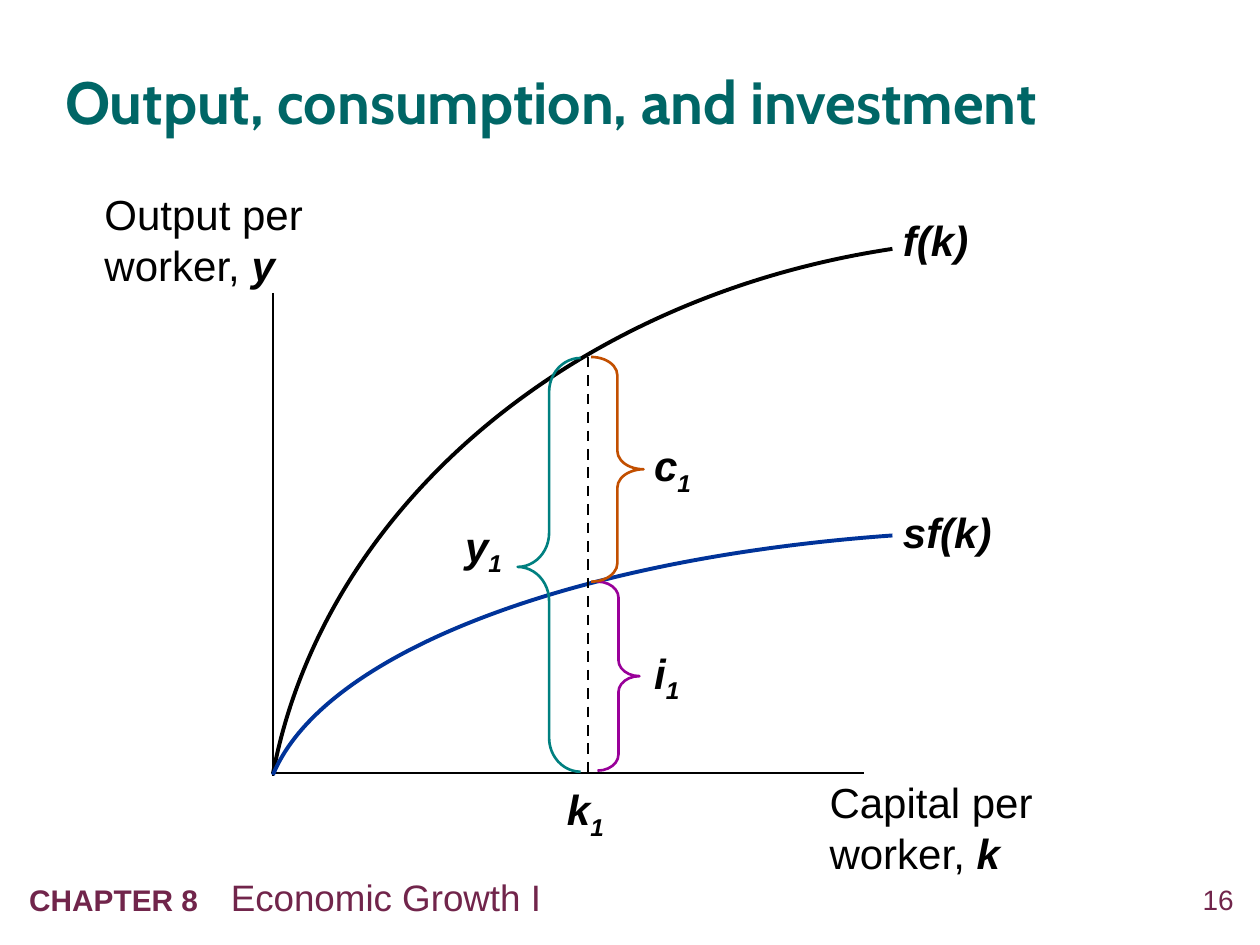
from dataclasses import dataclass

from lxml import etree
from pptx import Presentation
from pptx.dml.color import RGBColor
from pptx.enum import dml, shapes, text
from pptx.oxml.ns import qn
from pptx.util import Inches, Pt

BLACK = RGBColor(0x00, 0x00, 0x00)
BLUE = RGBColor(0x00, 0x33, 0x99)
TEAL = RGBColor(0x00, 0x80, 0x80)
PURPLE = RGBColor(0x99, 0x00, 0x99)
ORANGE = RGBColor(0xC2, 0x4F, 0x00)
TITLE_GREEN = RGBColor(0x00, 0x66, 0x66)
PLUM = RGBColor(0x71, 0x25, 0x4B)

# Grid of 120 columns by 90 rows; both steps are equal on a 4:3 slide
WIDTH, HEIGHT = Inches(10), Inches(7.5)
COLUMNS = 120
STEP = WIDTH / COLUMNS

Point = tuple[float, float]
Box = tuple[float, float, float, float]


@dataclass(frozen=True)
class Part:
    """A stretch of text; a part may start on a new line."""
    words: str
    size: float = 24
    bold: bool = False
    italic: bool = False
    subscript: bool = False
    new_line: bool = False


@dataclass(frozen=True)
class Curve:
    """A cubic curve: start, two control points and end."""
    points: tuple[Point, Point, Point, Point]
    color: RGBColor
    name: str
    label_box: Box


@dataclass(frozen=True)
class Brace:
    kind: shapes.MSO_SHAPE
    box: Box
    adjustments: Point
    color: RGBColor
    letter: str
    label_box: Box


CURVES = (
    Curve(((85, 23.7), (54.4, 28.3), (30.8, 48.4), (26, 73.7)),
          BLACK, "f(k)", (86, 20.4, 10, 4.8)),
    Curve(((85, 51), (54.4, 53.2), (30.8, 62.2), (26, 73.8)),
          BLUE, "sf(k)", (86, 48.2, 13, 4.8)),
)
BRACES = (
    Brace(shapes.MSO_SHAPE.LEFT_BRACE, (49.3, 34.1, 6, 39.4), (0.54, 0.505),
          TEAL, "y", (44.3, 49.9, 7, 4.8)),
    Brace(shapes.MSO_SHAPE.RIGHT_BRACE, (56.9, 55.4, 4, 18), (0.38, 0.5),
          PURPLE, "i", (62.3, 62, 7, 4.8)),
    Brace(shapes.MSO_SHAPE.RIGHT_BRACE, (56.3, 34, 5, 21.4), (0.35, 0.5),
          ORANGE, "c", (62.3, 42.2, 7, 4.8)),
)


def grid(*steps: float) -> list[int]:
    return [round(step * STEP) for step in steps]


def write(frame, parts: list[Part], *, color=BLACK, font="Arial",
          align=text.PP_ALIGN.LEFT, anchor=text.MSO_ANCHOR.MIDDLE,
          margins=(0, 0, 0, 0)):
    """Fill a text frame with one paragraph and return that paragraph."""
    frame.word_wrap = True
    frame.auto_size = text.MSO_AUTO_SIZE.NONE
    frame.vertical_anchor = anchor
    (frame.margin_left, frame.margin_top,
     frame.margin_right, frame.margin_bottom) = map(Inches, margins)
    paragraph = frame.paragraphs[0]
    paragraph.alignment = align
    for part in parts:
        if part.new_line:
            paragraph.add_line_break()
        run = paragraph.add_run()
        run.text = part.words
        run.font.name, run.font.size = font, Pt(part.size)
        run.font.bold, run.font.italic = part.bold, part.italic
        run.font.color.rgb = color
        if part.subscript:
            run.font._element.set("baseline", "-25000")
    return paragraph


def add_label(slide, box: Box, parts: list[Part], **formatting):
    label = slide.shapes.add_textbox(*grid(*box))
    return write(label.text_frame, parts, **formatting)


def symbol(letter: str, index: str = "") -> list[Part]:
    parts = [Part(letter, bold=True, italic=True)]
    if index:
        parts.append(Part(index, bold=True, italic=True, subscript=True))
    return parts


def add_line(slide, start: Point, end: Point, width: float, dash=None) -> None:
    line = slide.shapes.add_connector(
        shapes.MSO_CONNECTOR.STRAIGHT, *grid(*start, *end))
    line.line.color.rgb, line.line.width = BLACK, Pt(width)
    if dash:
        line.line.dash_style = dash
    etree.SubElement(line._element.spPr, qn("a:effectLst"))


def outline(shape, color: RGBColor, width: float) -> None:
    shape.shadow.inherit = False
    shape.fill.background()
    shape.line.color.rgb, shape.line.width = color, Pt(width)


def add_curve(slide, curve: Curve) -> None:
    start, *rest = [grid(*point) for point in curve.points]
    builder = slide.shapes.build_freeform(*start)
    builder.add_line_segments(rest, close=False)
    shape = builder.convert_to_shape()
    # Join the three segments into one cubic curve
    segments = list(shape._element.iter(qn("a:lnTo")))
    cubic = etree.SubElement(segments[0].getparent(), qn("a:cubicBezTo"))
    for segment in segments:
        cubic.append(segment[0])
        segment.getparent().remove(segment)
    outline(shape, curve.color, 2.25)
    add_label(slide, curve.label_box, symbol(curve.name))


def add_brace(slide, brace: Brace) -> None:
    add_label(slide, brace.label_box, symbol(brace.letter, "1"))
    shape = slide.shapes.add_shape(brace.kind, *grid(*brace.box))
    for i, value in enumerate(brace.adjustments):
        shape.adjustments[i] = value
    outline(shape, brace.color, 1.5)


def main() -> None:
    deck = Presentation()
    deck.slide_width, deck.slide_height = WIDTH, HEIGHT
    slide = deck.slides.add_slide(deck.slide_layouts[5])

    # Title
    title = slide.shapes.title
    title.left, title.top, title.width, title.height = grid(6.2, 3.8, 108.1, 11.3)
    heading = write(title.text_frame,
                    [Part("Output, consumption, and investment", 34, bold=True)],
                    color=TITLE_GREEN, font="Cabin")
    heading.line_spacing = 1.05

    # Footer: page number, and chapter name after a tab stop
    add_label(slide, (110.9, 84.1, 6.6, 3.8), [Part("16", 16)], color=PLUM,
              align=text.PP_ALIGN.RIGHT, anchor=text.MSO_ANCHOR.TOP)
    chapter = add_label(slide, (1.6, 82.7, 98.2, 5.4),
                        [Part("CHAPTER 8\t", 17, bold=True),
                         Part("Economic Growth I", 21)],
                        color=PLUM, anchor=text.MSO_ANCHOR.TOP,
                        margins=(0.1, 0.05, 0.1, 0.05))
    tabs = etree.SubElement(chapter._p.get_or_add_pPr(), qn("a:tabLst"))
    etree.SubElement(tabs, qn("a:tab"), pos=str(Inches(1.6)), algn="l")

    # Axes
    add_line(slide, (26, 27.9), (26, 73.9), 1)
    add_line(slide, (26.2, 73.65), (82.3, 73.65), 1)
    for box, quantity, letter in (((9.95, 18, 21, 9.6), "Output per ", "y"),
                                  ((79, 74, 21, 9.6), "Capital per ", "k")):
        add_label(slide, box, [Part(quantity), Part("worker, ", new_line=True),
                               *symbol(letter)])

    # Curves, the capital level k1 and the braces measured at it
    for curve in CURVES:
        add_curve(slide, curve)
    add_line(slide, (56, 34), (56, 74), 1.5, dml.MSO_LINE.DASH)
    add_label(slide, (54, 75, 7, 6), symbol("k", "1"), margins=(0, 0, 0, 0.1))
    for brace in BRACES:
        add_brace(slide, brace)

    deck.save("out.pptx")


if __name__ == "__main__":
    main()
